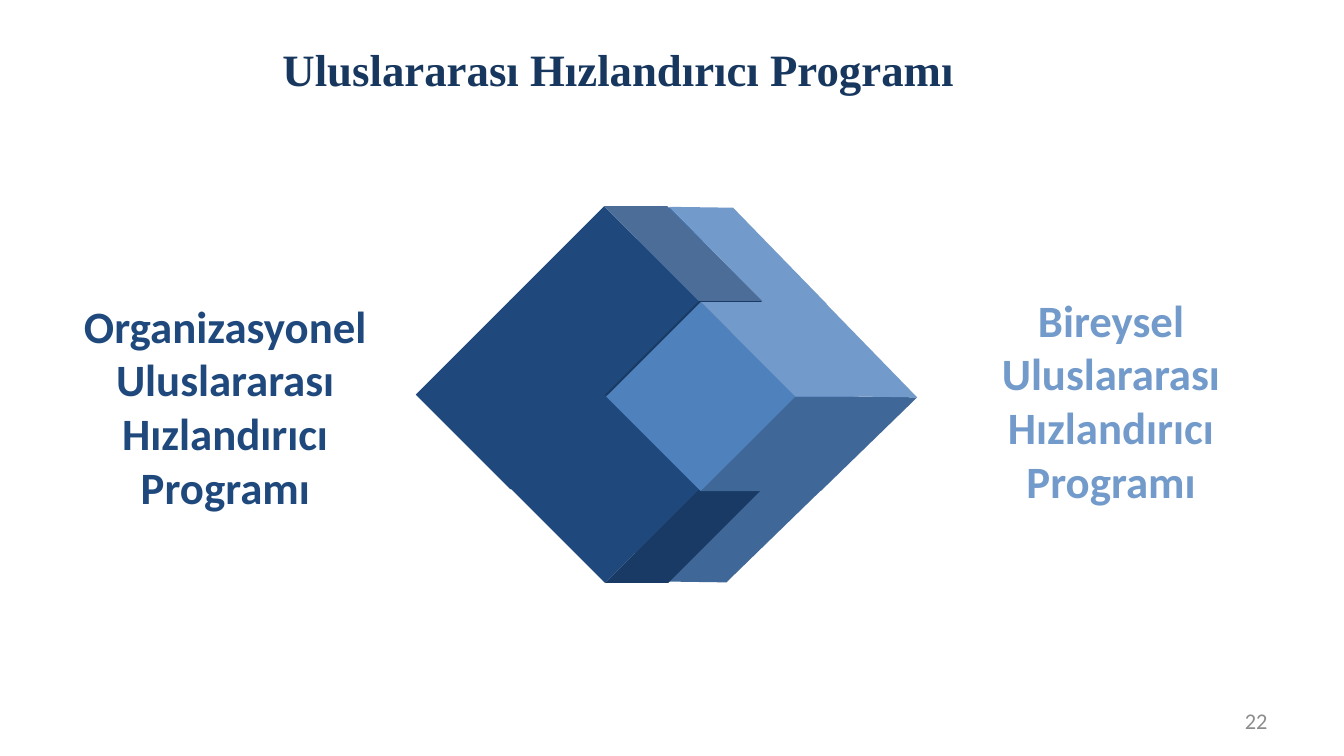
from pptx import Presentation
from pptx.dml.color import RGBColor
from pptx.enum.shapes import MSO_SHAPE as Shape
from pptx.enum.text import MSO_ANCHOR as Anchor, PP_ALIGN as Align
from pptx.util import Inches, Pt

NAVY = RGBColor(0x17, 0x37, 0x5E)
DARK_BLUE = RGBColor(0x1F, 0x49, 0x7D)
BLUE = RGBColor(0x4F, 0x81, 0xBD)
LIGHT_BLUE = RGBColor(0x72, 0x9A, 0xCA)
GREY = RGBColor(0x8C, 0x8C, 0x8C)

# Content: text, box (left, top, width, height), colour
TITLE = "Uluslararası Hızlandırıcı Programı"
LABELS = [
    ("Organizasyonel Uluslararası Hızlandırıcı Programı", (0.7, 2.91, 3.07, 2.26), DARK_BLUE),
    ("Bireysel Uluslararası Hızlandırıcı Programı", (9.37, 2.85, 3.3, 2.26), LIGHT_BLUE),
]
PAGE_NUMBER = "22"

# Cubes from back to front: colour, rotation, (left, top) of each
CUBE_SIZE = 1.77
CUBE_GROUPS = [
    (BLUE, 45.8, [(6.06, 2.11), (6.02, 3.95), (6.96, 3.04)]),
    (DARK_BLUE, 45, [(5.18, 3.02), (4.49, 3.03), (5.43, 3.96), (5.42, 2.1)]),
    (BLUE, 45, [(6.38, 3.05)]),
]


def write(shape, text, size, color, font="Calibri", bold=True, align=Align.CENTER, anchor=Anchor.TOP):
    frame = shape.text_frame
    frame.text = text
    frame.word_wrap = True
    frame.vertical_anchor = anchor
    paragraph = frame.paragraphs[0]
    paragraph.alignment = align
    run_font = paragraph.runs[0].font
    run_font.name, run_font.size, run_font.bold = font, Pt(size), bold
    run_font.color.rgb = color


def add_text_box(slide, box):
    return slide.shapes.add_textbox(*map(Inches, box))


def add_cube(slide, left, top, rotation, color):
    cube = slide.shapes.add_shape(Shape.CUBE, *map(Inches, (left, top, CUBE_SIZE, CUBE_SIZE)))
    cube.rotation = rotation
    cube.shadow.inherit = False
    cube.fill.solid()
    cube.fill.fore_color.rgb = color
    cube.line.fill.background()


def main():
    presentation = Presentation()
    presentation.slide_width, presentation.slide_height = Inches(13.33), Inches(7.5)
    slide = presentation.slides.add_slide(presentation.slide_layouts[5])

    # Interlocking cubes
    for color, rotation, corners in CUBE_GROUPS:
        for left, top in corners:
            add_cube(slide, left, top, rotation, color)

    # Title
    title = slide.shapes.title
    title.left, title.top, title.width, title.height = map(Inches, (1.16, 0.36, 9.95, 0.64))
    write(title, TITLE, 32, NAVY, font="Times New Roman")

    # Programme labels
    for text, box, color in LABELS:
        write(add_text_box(slide, box), text, 32, color)

    # Page number
    number = add_text_box(slide, (9.56, 6.95, 3.11, 0.4))
    write(number, PAGE_NUMBER, 16, GREY, bold=False, align=Align.RIGHT, anchor=Anchor.MIDDLE)

    presentation.save("out.pptx")


if __name__ == "__main__":
    main()
